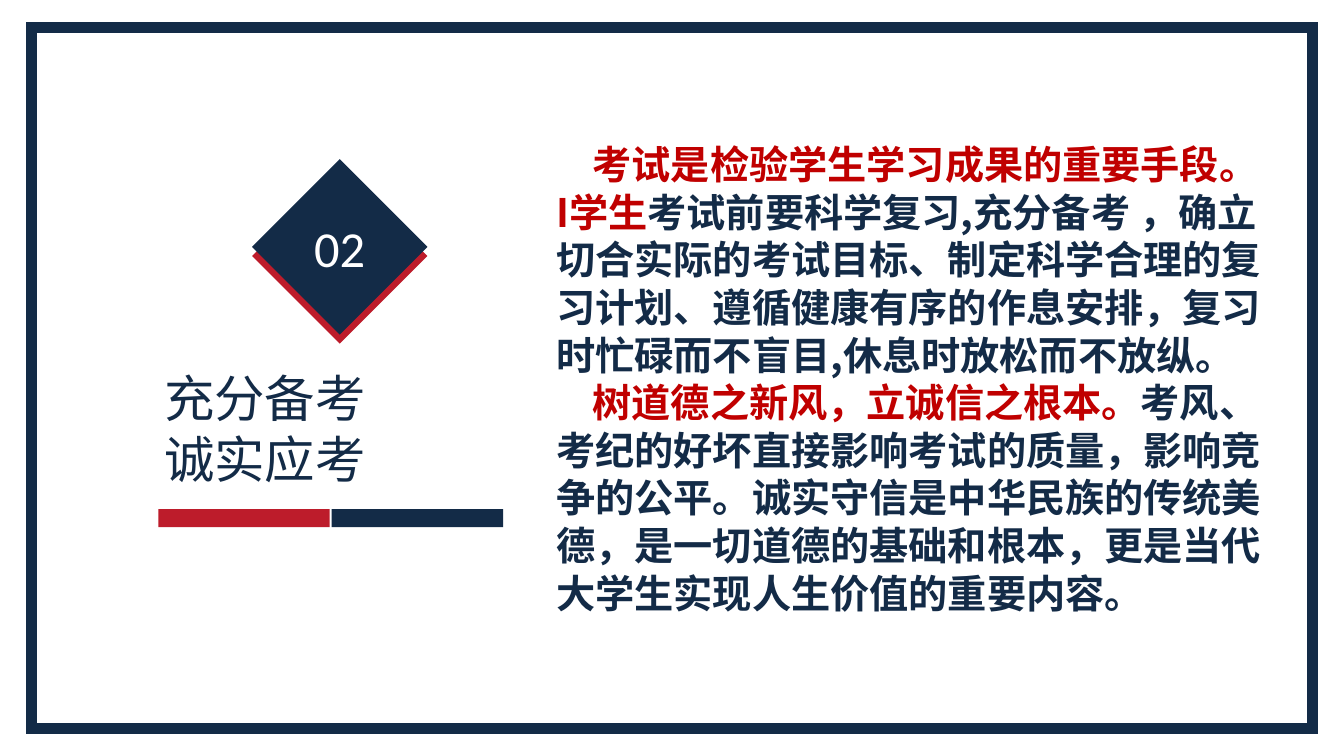
from lxml import etree
from pptx import Presentation
from pptx import util as u
from pptx.dml.color import RGBColor
from pptx.enum import shapes, text
from pptx.oxml.ns import qn

PX = 9144  # EMU per px, 100 px to the inch
NAVY, RED, DEEP_RED, WHITE = "132B47", "BD1C2B", "C00000", "FFFFFF"
CJK_FONT = "Noto Sans CJK SC"
SHAPE = shapes.MSO_SHAPE

HEADING = [[("充分备考", NAVY)], [("诚实应考", NAVY)]]
BODY = [
    [("考试是检验学生学习成果的重要手段。I学生", DEEP_RED),
     ("考试前要科学复习,充分备考 ，确立切合实际的考试目标、制定科学合理的复习计划、"
      "遵循健康有序的作息安排，复习时忙碌而不盲目,休息时放松而不放纵。", NAVY)],
    [("树道德之新风，立诚信之根本。", DEEP_RED),
     ("考风、考纪的好坏直接影响考试的质量，影响竞争的公平。诚实守信是中华民族的传统美德，"
      "是一切道德的基础和根本，更是当代大学生实现人生价值的重要内容。", NAVY)],
]


def color(hex_code):
    return RGBColor.from_string(hex_code)


def box(*lengths):
    return [u.Emu(length * PX) for length in lengths]


def style_run(run, font, size, hex_code, bold=False):
    run.font.name = font
    run.font.size = u.Pt(size)
    run.font.bold = bold
    run.font.color.rgb = color(hex_code)
    # The East Asian typeface decides how Chinese characters are drawn
    etree.SubElement(run.font._element, qn("a:ea")).set("typeface", font)


def add_block(slide, kind, bounds, fill):
    block = slide.shapes.add_shape(kind, *box(*bounds))
    block.shadow.inherit = False
    block.fill.solid()
    block.fill.fore_color.rgb = color(fill)
    block.line.fill.background()
    return block


def add_number(block, number):
    frame = block.text_frame
    frame.text = number
    frame.vertical_anchor = text.MSO_ANCHOR.MIDDLE
    paragraph = frame.paragraphs[0]
    paragraph.alignment = text.PP_ALIGN.CENTER
    style_run(paragraph.runs[0], "Calibri", 36, WHITE)


def add_copy(slide, bounds, paragraphs, size, leading, align, bold=False, indent=0):
    """Add wrapped text; each paragraph is a list of (words, colour) pairs."""
    frame = slide.shapes.add_textbox(*box(*bounds)).text_frame
    frame.word_wrap = True
    for index, pieces in enumerate(paragraphs):
        paragraph = frame.add_paragraph() if index else frame.paragraphs[0]
        paragraph.alignment = align
        paragraph.line_spacing = u.Pt(leading)
        if indent:
            paragraph._p.get_or_add_pPr().set("indent", str(indent * PX))
        for words, hex_code in pieces:
            run = paragraph.add_run()
            run.text = words
            style_run(run, CJK_FONT, size, hex_code, bold)


def main():
    deck = Presentation()
    deck.slide_width, deck.slide_height = u.Inches(13.33), u.Inches(7.5)
    slide = deck.slides.add_slide(deck.slide_layouts[6])

    border = add_block(slide, SHAPE.FRAME, (26, 22, 1281, 706), NAVY)
    border.adjustments[0] = 0.015

    add_block(slide, SHAPE.DIAMOND, (250, 167, 174, 174), RED)
    badge = add_block(slide, SHAPE.DIAMOND, (250, 158, 174, 174), NAVY)
    add_number(badge, "02")

    add_copy(slide, (153, 358, 337, 131), HEADING, 36, 44, text.PP_ALIGN.JUSTIFY)
    for left, fill in ((157, RED), (329, NAVY)):
        add_block(slide, SHAPE.RECTANGLE, (left, 505, 170, 18), fill)

    add_copy(slide, (542, 134, 727, 481), BODY, 28, 34, text.PP_ALIGN.LEFT,
             bold=True, indent=36)
    deck.save("out.pptx")


if __name__ == "__main__":
    main()
